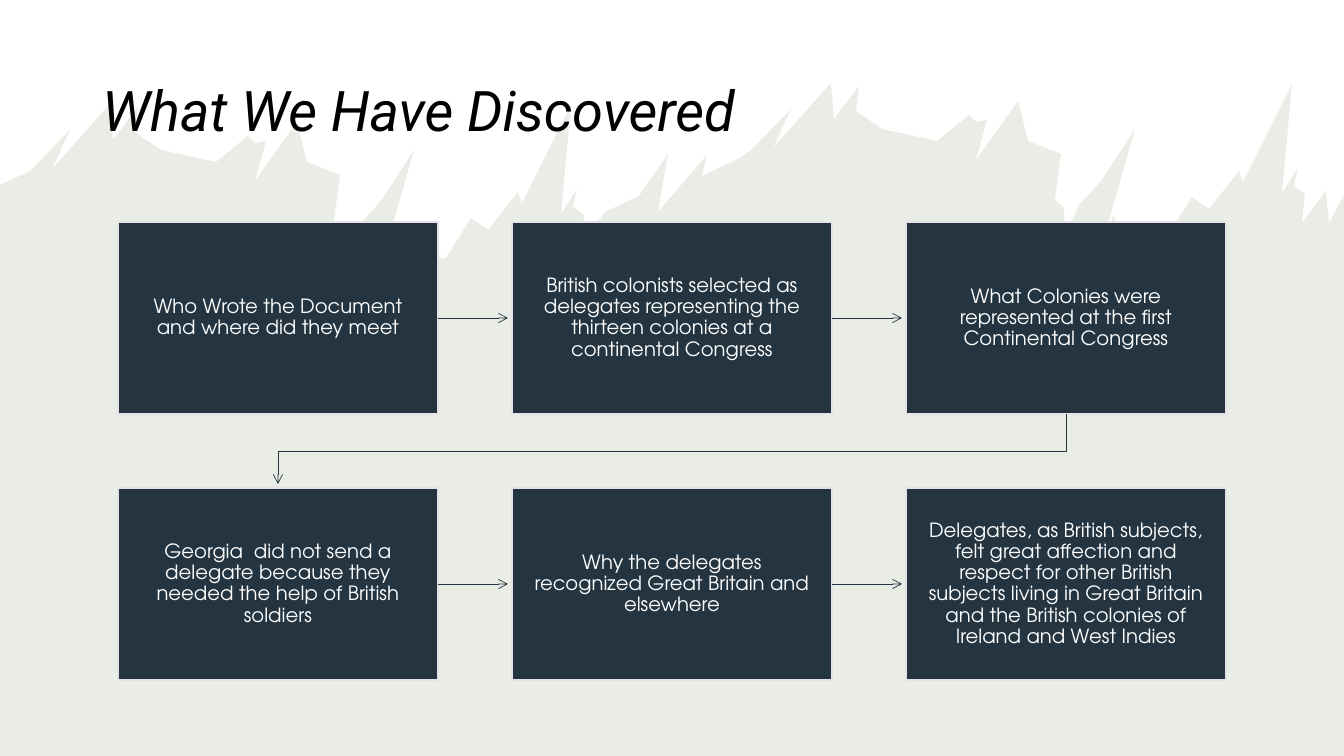
from lxml import etree
from pptx import Presentation
from pptx.dml.color import RGBColor
from pptx.enum.shapes import MSO_CONNECTOR, MSO_SHAPE
from pptx.enum.text import MSO_ANCHOR, MSO_AUTO_SIZE, PP_ALIGN
from pptx.oxml.ns import qn
from pptx.util import Pt

STRAIGHT = MSO_CONNECTOR.STRAIGHT
RECTANGLE = MSO_SHAPE.RECTANGLE
MIDDLE = MSO_ANCHOR.MIDDLE
NO_FIT = MSO_AUTO_SIZE.NONE
CENTER, LEFT = PP_ALIGN.CENTER, PP_ALIGN.LEFT
RIGHT_SIDE = 3

NAVY = RGBColor(0x24, 0x35, 0x41)
PALE = RGBColor(0xE4, 0xE2, 0xE8)
SAGE = RGBColor(0x9A, 0xA6, 0x7D)
WHITE = RGBColor(0xFF, 0xFF, 0xFF)
BLACK = RGBColor(0x00, 0x00, 0x00)

SLIDE_WIDTH, SLIDE_HEIGHT = 1344, 756
SCALE = 12192000 / SLIDE_WIDTH

BOX_LEFT, BOX_TOP, BOX_WIDTH, BOX_HEIGHT = 118, 222, 320, 192
COLUMN_STEP, ROW_STEP = 394, 266
COLUMNS = 3
ARROW_GAP = 4
INSET = 16

STEPS = [
    "Who Wrote the Document and where did they meet",
    "British colonists selected as delegates representing the thirteen colonies at a continental Congress",
    "What Colonies were represented at the first Continental Congress",
    "Georgia  did not send a delegate because they needed the help of British soldiers",
    "Why the delegates recognized Great Britain and elsewhere",
    "Delegates, as British subjects, felt great affection and respect for other British subjects "
    "living in Great Britain and the British colonies of Ireland and West Indies",
]

# Each spike: foot_x, foot_y, lean, rise
RIDGE_SPIKES = [
    (0, 0, 40, 41), (22, -2, 58, 65), (83, -31, 25, 33), (105, -39, 26, -18),
    (186, -9, 32, 26), (225, -28, 11, 2), (225, 10, 42, 59), (277, -9, 33, -13),
    (304, 50, 9, -8), (314, 86, 14, 31), (351, 30, 33, 51), (349, 102, 14, 38),
    (370, 104, 18, 17), (416, 87, 25, 40), (458, 59, 30, 38), (492, 32, 49, 98),
    (531, 43, 16, 25), (543, 36, 11, -8), (551, 73, 24, 32),
]
SADDLE_SPIKES = [(0, 0, 29, 42), (19, 16, 49, 57), (63, -20, 36, 17)]
EDGE_SPIKES = [(0, 0, 15, 28)]
SKYLINE = [
    (30, 171, RIDGE_SPIKES),
    (639, 196, SADDLE_SPIKES),
    (751, 150, RIDGE_SPIKES),
    (1329, 223, EDGE_SPIKES),
]
SKYLINE_START = 185


def px(length):
    return round(length * SCALE)


def style_arrow(arrow):
    arrow.line.color.rgb = NAVY
    arrow.line.width = Pt(0.5)
    properties = arrow.element.spPr
    etree.SubElement(properties.find(qn("a:ln")), qn("a:tailEnd"), type="arrow")
    etree.SubElement(properties, qn("a:effectLst"))


deck = Presentation()
deck.slide_width, deck.slide_height = px(SLIDE_WIDTH), px(SLIDE_HEIGHT)
page = deck.slides.add_slide(deck.slide_layouts[5])

title = page.shapes.title
title.left, title.top, title.width, title.height = px(92), px(40), px(1159), px(146)
title.text_frame.text = "What We Have Discovered"
title.text_frame.auto_size = NO_FIT
title.text_frame.vertical_anchor = MIDDLE
para = title.text_frame.paragraphs[0]
para.alignment = LEFT
para.line_spacing = 0.9
span = para.runs[0]
span.font.name = "Roboto"
span.font.size = Pt(40)
span.font.italic = True
span.font.color.rgb = BLACK

outline = []
for origin_x, origin_y, spikes in SKYLINE:
    for foot_x, foot_y, lean, rise in spikes:
        x, y = origin_x + foot_x, origin_y + foot_y
        outline += [(x, y), (x + lean, y - rise)]
outline += [(SLIDE_WIDTH, SLIDE_HEIGHT), (0, SLIDE_HEIGHT)]
builder = page.shapes.build_freeform(0, SKYLINE_START, scale=SCALE)
builder.add_line_segments(outline, close=True)
brush = builder.convert_to_shape()
brush.shadow.inherit = False
brush.fill.solid()
brush.fill.fore_color.rgb = SAGE
brush.line.fill.background()
tint = brush.element.spPr.find(qn("a:solidFill"))[0]
etree.SubElement(tint, qn("a:alpha"), val="20000")
title.element.addprevious(brush.element)

for index, step in enumerate(STEPS):
    row, column = divmod(index, COLUMNS)
    left = BOX_LEFT + column * COLUMN_STEP
    top = BOX_TOP + row * ROW_STEP
    box = page.shapes.add_shape(RECTANGLE, px(left), px(top), px(BOX_WIDTH), px(BOX_HEIGHT))
    box.shadow.inherit = False
    box.fill.solid()
    box.fill.fore_color.rgb = NAVY
    box.line.color.rgb = PALE
    box.line.width = Pt(1)
    frame = box.text_frame
    frame.word_wrap = True
    frame.vertical_anchor = MIDDLE
    frame.margin_left = frame.margin_right = px(INSET)
    frame.margin_top = frame.margin_bottom = px(INSET)
    frame.text = step
    para = frame.paragraphs[0]
    para.alignment = CENTER
    para.line_spacing = 0.9
    span = para.runs[0]
    span.font.name = "TeX Gyre Adventor"
    span.font.size = Pt(14)
    span.font.color.rgb = WHITE

    if column < COLUMNS - 1:
        middle = px(top + BOX_HEIGHT / 2)
        arrow_end = px(left + COLUMN_STEP - ARROW_GAP)
        arrow = page.shapes.add_connector(STRAIGHT, px(left + BOX_WIDTH), middle, arrow_end, middle)
        arrow.begin_connect(box, RIGHT_SIDE)
        style_arrow(arrow)

first_center = BOX_LEFT + BOX_WIDTH // 2
last_center = first_center + (COLUMNS - 1) * COLUMN_STEP
first_row_bottom = BOX_TOP + BOX_HEIGHT
second_row_top = BOX_TOP + ROW_STEP
turn = (first_row_bottom + second_row_top) // 2
builder = page.shapes.build_freeform(last_center, first_row_bottom, scale=SCALE)
builder.add_line_segments(
    [(last_center, turn), (first_center, turn), (first_center, second_row_top - ARROW_GAP)],
    close=False,
)
row_link = builder.convert_to_shape()
row_link.fill.background()
style_arrow(row_link)

deck.save("out.pptx")
